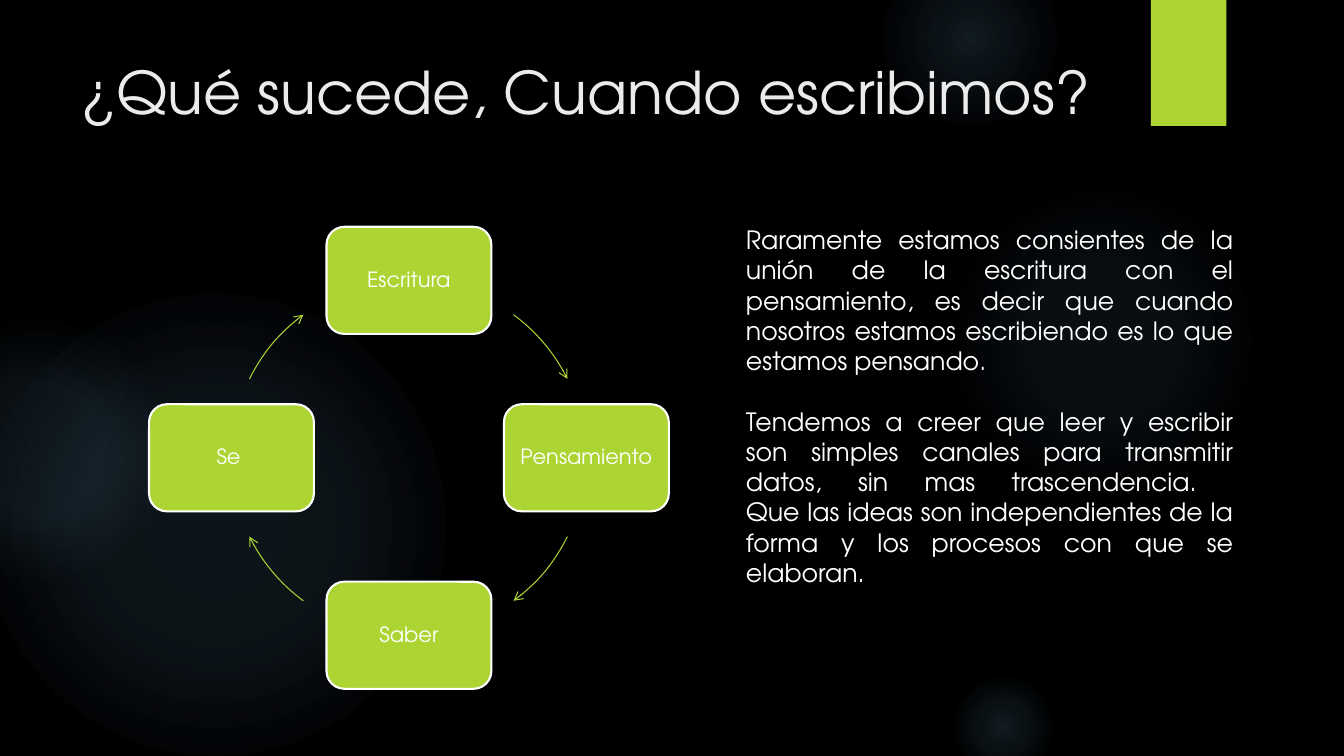
from lxml.etree import SubElement
from pptx import Presentation
from pptx.dml.color import RGBColor as RGB
from pptx.enum.shapes import MSO_SHAPE as SHAPE
from pptx.enum.text import MSO_ANCHOR as ANCHOR, PP_ALIGN as ALIGN
from pptx.oxml import parse_xml
from pptx.oxml.ns import nsdecls, qn
from pptx.util import Pt

PX = 9525
FONT = "TeX Gyre Adventor"
COLORS = {
    "night": "000000",
    "glow": "7AC4F0",
    "lime": "ACD433",
    "title": "EBEBEB",
    "white": "FFFFFF",
}


def add_figure(kind, left, top, width, height, fill=None):
    figure = slide.shapes.add_shape(kind, left * PX, top * PX, width * PX, height * PX)
    figure.shadow.inherit = False
    figure.line.fill.background()
    if fill:
        figure.fill.solid()
        figure.fill.fore_color.rgb = RGB.from_string(COLORS[fill])
    return figure


def write(paragraph, text, size, color):
    run = paragraph.add_run()
    run.text = text
    run.font.name = FONT
    run.font.size = Pt(size)
    run.font.color.rgb = RGB.from_string(COLORS[color])


prs = Presentation()
prs.slide_width, prs.slide_height = 1280 * PX, 720 * PX
slide = prs.slides.add_slide(prs.slide_layouts[6])
slide.background.fill.solid()
slide.background.fill.fore_color.rgb = RGB.from_string(COLORS["night"])

glows = [
    (-16, 280, 440, [(0, 11), (36, 10), (75, 0)]),
    (-88, 304, 248, [(0, 8), (36, 8), (72, 0)]),
    (903, 176, 296, [(0, 7), (36, 6), (69, 0)]),
    (840, -48, 168, [(0, 14), (36, 7), (73, 0)]),
    (903, 640, 104, [(0, 14), (36, 7), (66, 0)]),
]
for left, top, size, fades in glows:
    glow = add_figure(SHAPE.OVAL, left, top, size, size)
    stops = "".join(
        f'<a:gs pos="{position * 1000}"><a:srgbClr val="{COLORS["glow"]}">'
        f'<a:alpha val="{opacity * 1000}"/></a:srgbClr></a:gs>'
        for position, opacity in fades
    )
    gradient = parse_xml(
        f'<a:gradFill {nsdecls("a")} rotWithShape="1"><a:gsLst>{stops}</a:gsLst>'
        '<a:path path="circle"><a:fillToRect l="50000" t="50000" r="50000" b="50000"/>'
        '</a:path></a:gradFill>'
    )
    glow.element.spPr.find(qn("a:prstGeom")).addnext(gradient)

add_figure(SHAPE.RECTANGLE, 1096, 0, 72, 120, "lime")

heading = slide.shapes.add_textbox(68 * PX, 48 * PX, 988 * PX, 147 * PX).text_frame
heading.word_wrap = True
write(heading.paragraphs[0], "¿Qué sucede, Cuando escribimos?", 42, "title")

CENTER_X, CENTER_Y, RADIUS = 389, 436, 169
STEP_W, STEP_H = 157, 102
SWEEP = 27.3
cycle = [
    ("Escritura", 0, -1, 306.3),
    ("Pensamiento", 1, 0, 26.4),
    ("Saber", 0, 1, 126.3),
    ("Se ", -1, 0, 206.4),
]
for label, across, down, start in cycle:
    step = add_figure(
        SHAPE.ROUNDED_RECTANGLE,
        CENTER_X + across * RADIUS - STEP_W // 2,
        CENTER_Y + down * RADIUS - STEP_H // 2,
        STEP_W, STEP_H, "lime",
    )
    step.line.color.rgb = RGB.from_string(COLORS["white"])
    step.line.width = Pt(1.5)
    frame = step.text_frame
    frame.word_wrap = True
    frame.vertical_anchor = ANCHOR.MIDDLE
    frame.margin_left = frame.margin_right = 4 * PX
    frame.margin_top = frame.margin_bottom = 4 * PX
    frame.paragraphs[0].alignment = ALIGN.CENTER
    frame.paragraphs[0].line_spacing = 0.9
    write(frame.paragraphs[0], label, 15, "white")

    arrow = add_figure(SHAPE.ARC, CENTER_X - RADIUS, CENTER_Y - RADIUS, 2 * RADIUS, 2 * RADIUS)
    arrow.fill.background()
    arrow.adjustments[0] = start * 0.6
    arrow.adjustments[1] = (start + SWEEP) * 0.6
    arrow.line.color.rgb = RGB.from_string(COLORS["lime"])
    arrow.line.width = Pt(0.75)
    SubElement(arrow.element.spPr.find(qn("a:ln")), qn("a:tailEnd"), type="arrow")

explanation = slide.shapes.add_textbox(701 * PX, 209 * PX, 483 * PX, 359 * PX).text_frame
explanation.word_wrap = True
awareness = explanation.paragraphs[0]
awareness.alignment = ALIGN.JUSTIFY
write(
    awareness,
    "Raramente estamos consientes de la unión de la escritura con el pensamiento, "
    "es decir que cuando nosotros estamos escribiendo es lo que estamos pensando.",
    18, "white",
)
belief = explanation.add_paragraph()
belief.alignment = ALIGN.JUSTIFY
belief.space_before = Pt(21.6)
write(
    belief,
    "Tendemos a creer que leer y escribir son simples canales para transmitir datos, "
    "sin mas trascendencia. ",
    18, "white",
)
belief.add_line_break()
write(
    belief,
    "Que las ideas son independientes de la forma y los procesos con que se elaboran.",
    18, "white",
)

prs.save("out.pptx")
